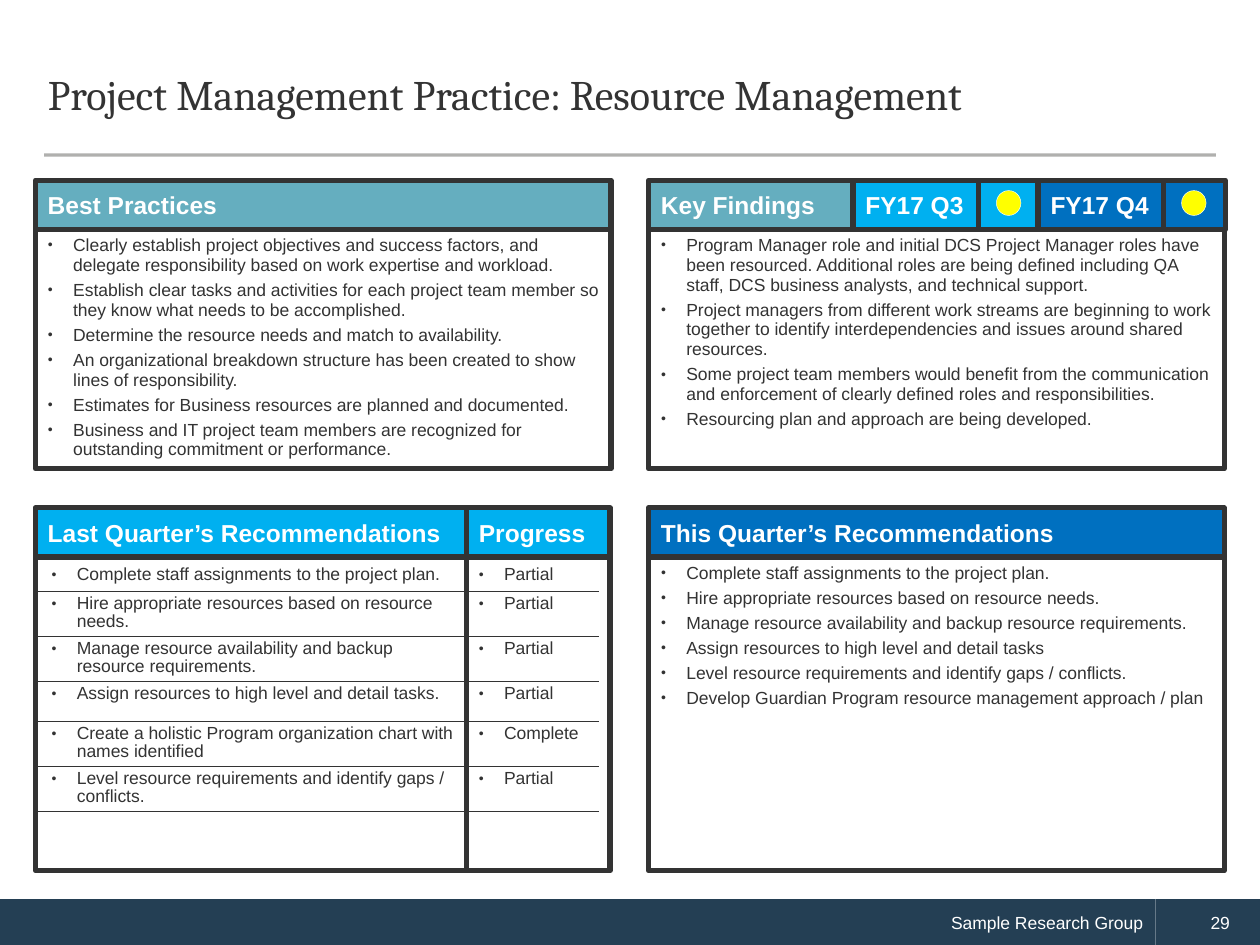
from lxml.etree import SubElement
from pptx import Presentation
from pptx.dml.color import RGBColor
from pptx.enum.shapes import MSO_CONNECTOR, MSO_SHAPE
from pptx.enum.text import MSO_ANCHOR, MSO_AUTO_SIZE, PP_ALIGN
from pptx.oxml import parse_xml
from pptx.oxml.ns import nsdecls, qn
from pptx.util import Pt

COLORS = {
    "ink": "333333", "white": "FFFFFF", "teal": "65AEBF", "sky": "00B0F0",
    "blue": "0070C0", "navy": "243F54", "yellow": "FFFF00", "rule": "45433E",
}

# Shared geometry, in points
LEFT_X, RIGHT_X, PANEL_W = 20.2, 370.6, 329
TOP_Y, LOWER_Y, HEADER_H = 103, 290.2, 28.1
TOP_BODY_H, LOWER_BODY_H = 136.8, 179.3
TASK_W, PROGRESS_W = 246.4, 82.1

BEST_PRACTICES = [
    "Clearly establish project objectives and success factors, and delegate responsibility based on work expertise and workload.",
    "Establish clear tasks and activities for each project team member so they know what needs to be accomplished.",
    "Determine the resource needs and match to availability.",
    "An organizational breakdown structure has been created to show lines of responsibility.",
    "Estimates for Business resources are planned and documented.",
    "Business and IT project team members are recognized for outstanding commitment or performance.",
]
KEY_FINDINGS = [
    "Program Manager role and initial DCS Project Manager roles have been resourced. Additional roles are being defined including QA staff, DCS business analysts, and technical support.",
    "Project managers from different work streams are beginning to work together to identify interdependencies and issues around shared resources.",
    "Some project team members would benefit from the communication and enforcement of clearly defined roles and responsibilities.",
    "Resourcing plan and approach are being developed.",
]
THIS_QUARTER = [
    "Complete staff assignments to the project plan.",
    "Hire appropriate resources based on resource needs.",
    "Manage resource availability and backup resource requirements.",
    "Assign resources to high level and detail tasks",
    "Level resource requirements and identify gaps / conflicts.",
    "Develop Guardian Program resource management approach / plan",
]
# Task, progress, row height
LAST_QUARTER = [
    ("Complete staff assignments to the project plan.", "Partial", 16.6),
    ("Hire appropriate resources based on resource needs.", "Partial", 25.7),
    ("Manage resource availability and backup resource requirements.", "Partial", 25.7),
    ("Assign resources to high level and detail tasks.", "Partial", 22.9),
    ("Create a holistic Program organization chart with names identified", "Complete", 25.7),
    ("Level resource requirements and identify gaps / conflicts.", "Partial", 25.7),
]


def rgb(color):
    return RGBColor.from_string(COLORS[color])


def apply(target, values):
    for attribute, value in values.items():
        setattr(target, attribute, value)


def place(shape, x, y, w, h):
    apply(shape, {"left": Pt(x), "top": Pt(y), "width": Pt(w), "height": Pt(h)})


def paint(shape, fill, line=None, width=3):
    shape.shadow.inherit = False
    shape.fill.solid()
    shape.fill.fore_color.rgb = rgb(fill)
    if line:
        shape.line.color.rgb = rgb(line)
        shape.line.width = Pt(width)
    else:
        shape.line.fill.background()


def write(paragraph, text, size, color, bold=False, face="Arial"):
    run = paragraph.add_run()
    run.text = text
    apply(run.font, {"name": face, "size": Pt(size), "bold": bold})
    run.font.color.rgb = rgb(color)


def add_box(slide, box, fill, line=None, kind=MSO_SHAPE.RECTANGLE, width=3):
    shape = slide.shapes.add_shape(kind, *map(Pt, box))
    paint(shape, fill, line, width)
    return shape


def add_label(slide, box, text, fill, line="ink", size=14, bold=True,
              align=PP_ALIGN.LEFT, indent=0):
    label = add_box(slide, box, fill, line)
    apply(label.text_frame, {"word_wrap": True, "vertical_anchor": MSO_ANCHOR.MIDDLE})
    paragraph = label.text_frame.paragraphs[0]
    paragraph.alignment = align
    paragraph._p.get_or_add_pPr().set("marL", str(Pt(indent)))
    write(paragraph, text, size, "white", bold)


def write_bullet(paragraph, text, line_spacing, space_before):
    properties = paragraph._p.get_or_add_pPr()
    properties.set("marL", str(Pt(14.4)))
    properties.set("indent", str(Pt(-14.4)))
    SubElement(properties, qn("a:buSzPct"), val="80000")
    SubElement(properties, qn("a:buFont"), typeface="Arial")
    SubElement(properties, qn("a:buChar"), char="•")
    apply(paragraph, {"alignment": PP_ALIGN.LEFT, "line_spacing": line_spacing,
                      "space_before": Pt(space_before), "space_after": Pt(0)})
    write(paragraph, text, 10, "ink")


def fill_list(body, box, items):
    place(body, *box)
    paint(body, "white", "ink")
    frame = body.text_frame
    apply(frame, {"word_wrap": True, "auto_size": MSO_AUTO_SIZE.NONE,
                  "vertical_anchor": MSO_ANCHOR.TOP})
    for number, item in enumerate(items):
        paragraph = frame.add_paragraph() if number else frame.paragraphs[0]
        write_bullet(paragraph, item, 0.94, 3 if number else 0)


def fill_title(title, text):
    place(title, 20.2, 20.9, 679, 67.7)
    apply(title.text_frame, {"word_wrap": True, "auto_size": MSO_AUTO_SIZE.NONE,
                             "vertical_anchor": MSO_ANCHOR.MIDDLE})
    paragraph = title.text_frame.paragraphs[0]
    apply(paragraph, {"alignment": PP_ALIGN.LEFT, "line_spacing": Pt(26)})
    write(paragraph, text, 24, "ink", face="Cambria")


def add_rule(slide):
    rule = slide.shapes.add_connector(
        MSO_CONNECTOR.STRAIGHT, Pt(25.2), Pt(88.6), Pt(694.8), Pt(88.6))
    rule.line.color.rgb = rgb("rule")
    rule.line.width = Pt(1.75)
    color = next(rule._element.iter(qn("a:srgbClr")))
    SubElement(color, qn("a:alpha"), val="42000")
    SubElement(rule._element.spPr, qn("a:effectLst"))


def add_quarter(slide, x, text, fill):
    add_label(slide, (x, TOP_Y, 72.7, HEADER_H), text, fill)
    add_box(slide, (x + 71.7, TOP_Y, 35.3, HEADER_H), fill, "ink")
    add_box(slide, (x + 82, 108.9, 14, 14.2), "yellow", "white", MSO_SHAPE.OVAL, 0.25)


def set_borders(cell, borders):
    properties = cell._tc.get_or_add_tcPr()
    for position, (side, (color, width)) in enumerate(borders.items()):
        properties.insert(position, parse_xml(
            f'<a:ln{side} {nsdecls("a")} w="{Pt(width)}"><a:solidFill>'
            f'<a:srgbClr val="{COLORS[color]}"/></a:solidFill></a:ln{side}>'))


def add_progress_table(slide):
    heights = [height for _, _, height in LAST_QUARTER]
    table = slide.shapes.add_table(len(LAST_QUARTER), 2, Pt(22.3), Pt(321.1),
                                   Pt(319.7), Pt(sum(heights))).table
    apply(table, {"first_row": False, "horz_banding": False})
    for column, width in zip(table.columns, (244.1, 75.6)):
        column.width = Pt(width)
    edge, divider, hairline = ("white", 1), ("ink", 3), ("ink", 0.25)
    for row, (task, progress, height) in enumerate(LAST_QUARTER):
        table.rows[row].height = Pt(height)
        for column, text in enumerate((task, progress)):
            cell = table.cell(row, column)
            apply(cell, {"margin_top": Pt(2.6), "margin_bottom": Pt(2.6),
                         "margin_left": Pt(7.2), "margin_right": Pt(7.2)})
            cell.fill.solid()
            cell.fill.fore_color.rgb = rgb("white")
            write_bullet(cell.text_frame.paragraphs[0], text, 0.9, 0)
            set_borders(cell, {"L": divider if column else edge,
                               "R": edge if column else divider,
                               "T": hairline if row else edge, "B": hairline})


def main():
    deck = Presentation()
    apply(deck, {"slide_width": Pt(720), "slide_height": Pt(540)})
    slide = deck.slides.add_slide(deck.slide_layouts[4])
    title, practices, findings, actions, unused = slide.placeholders
    unused._element.getparent().remove(unused._element)

    # Title and lists
    fill_title(title, "Project Management Practice: Resource Management")
    top_body, lower_body = TOP_Y + HEADER_H, LOWER_Y + HEADER_H
    fill_list(practices, (LEFT_X, top_body, PANEL_W, TOP_BODY_H), BEST_PRACTICES)
    fill_list(findings, (RIGHT_X, top_body, PANEL_W, TOP_BODY_H), KEY_FINDINGS)
    fill_list(actions, (RIGHT_X, lower_body, PANEL_W, LOWER_BODY_H), THIS_QUARTER)
    add_rule(slide)

    # Panel headers
    for x, y, width, text, fill in (
        (LEFT_X, TOP_Y, PANEL_W, "Best Practices", "teal"),
        (RIGHT_X, TOP_Y, PANEL_W, "Key Findings", "teal"),
        (RIGHT_X, LOWER_Y, PANEL_W, "This Quarter’s Recommendations", "blue"),
    ):
        add_label(slide, (x, y, width, HEADER_H), text, fill)

    # Quarter status
    add_quarter(slide, 487.4, "FY17 Q3", "sky")
    add_quarter(slide, 593.2, "FY17 Q4", "blue")

    # Last quarter's progress
    for x, width, text in ((LEFT_X, TASK_W, "Last Quarter’s Recommendations"),
                           (LEFT_X + TASK_W, PROGRESS_W, "Progress")):
        add_box(slide, (x, lower_body, width, LOWER_BODY_H), "white", "ink")
        add_label(slide, (x, LOWER_Y, width, HEADER_H), text, "sky")
    add_progress_table(slide)

    # Footer
    footer = {"fill": "navy", "line": None, "size": 10, "bold": False}
    add_label(slide, (0, 513.8, 660.2, 26.2), "Sample Research Group",
              align=PP_ALIGN.RIGHT, indent=20.9, **footer)
    add_label(slide, (660.2, 513.8, 59.8, 26.2), "29",
              align=PP_ALIGN.CENTER, indent=14.4, **footer)

    deck.save("out.pptx")


if __name__ == "__main__":
    main()
